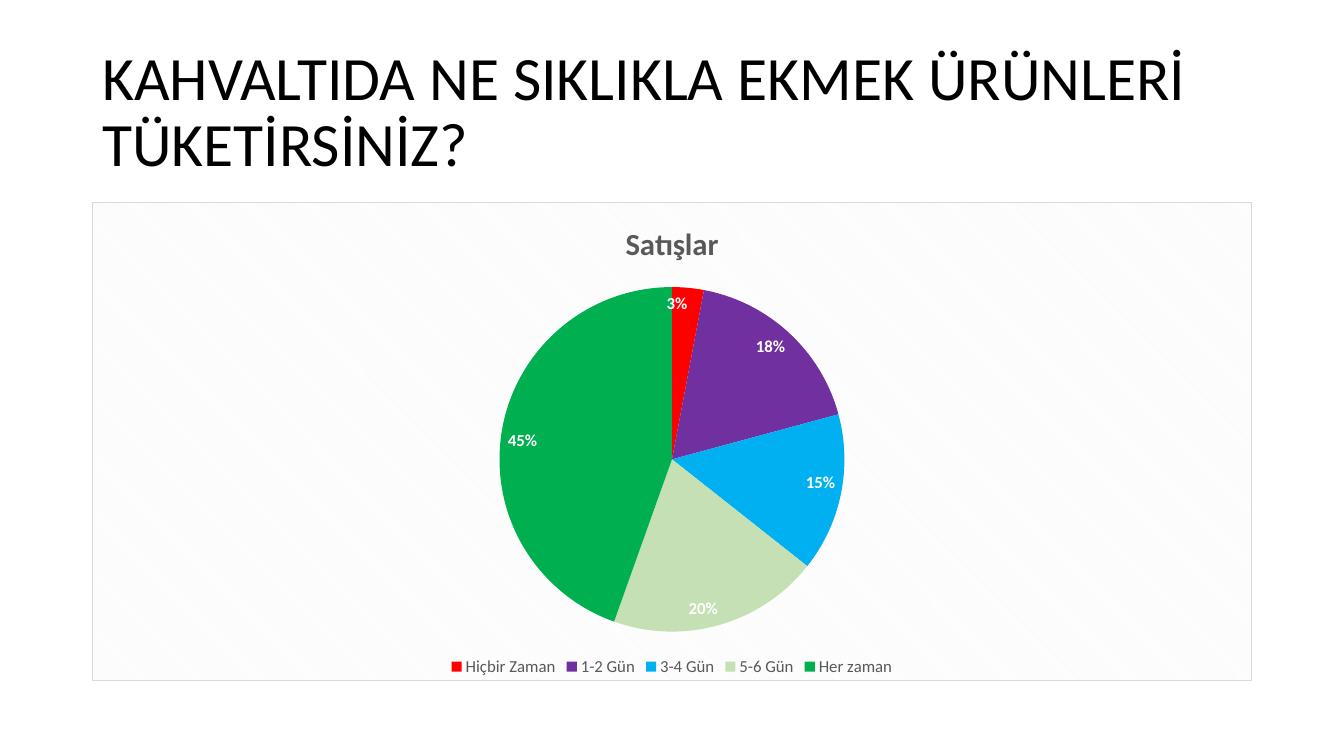
"""Build a slide with a survey question and a pie chart of the answers."""
import lxml.etree
import pptx
import pptx.chart.data
import pptx.dml.color
import pptx.enum.chart
import pptx.enum.text
import pptx.oxml
import pptx.util

FONT = "Calibri"
COLORS = {
    "title": "000000",
    "chart_text": "595959",
    "label": "FFFFFF",
    "pattern": "F2F2F2",
    "background": "FFFFFF",
    "border": "D9D9D9",
}
ANSWERS = [
    ("Hiçbir Zaman", 3, "FF0000"),
    ("1-2 Gün", 18, "7030A0"),
    ("3-4 Gün", 15, "00B0F0"),
    ("5-6 Gün", 20, "C5E0B4"),
    ("Her zaman", 45, "00B050"),
]
LEFT, WIDTH = 66, 828


def style_font(font, size, color, bold=False):
    """Set the typeface, size, colour and weight of a font."""
    font.name = FONT
    font.size = pptx.util.Pt(size)
    font.bold = bold
    font.color.rgb = pptx.dml.color.RGBColor.from_string(color)


def write_text(text_frame, text, *, size, color, bold=False, spacing=None):
    """Write one formatted paragraph into a text frame."""
    paragraph = text_frame.paragraphs[0]
    paragraph.line_spacing = spacing
    run = paragraph.add_run()
    run.text = text
    style_font(run.font, size, color, bold)


def add_title(slide, text):
    """Add the question at the top of the slide."""
    shape = slide.shapes.add_textbox(
        *map(pptx.util.Pt, (LEFT, 28.75, WIDTH, 104.4)))
    text_frame = shape.text_frame
    text_frame.word_wrap = True
    text_frame.vertical_anchor = pptx.enum.text.MSO_ANCHOR.MIDDLE
    write_text(text_frame, text, size=44, color=COLORS["title"], spacing=0.9)


def fill_chart_area(chart):
    """Give the chart area its diagonal pattern and thin border."""
    namespace = "http://schemas.openxmlformats.org/drawingml/2006/"
    properties = pptx.oxml.parse_xml(
        f'<c:spPr xmlns:c="{namespace}chart" xmlns:a="{namespace}main">'
        '<a:pattFill prst="dkDnDiag">'
        f'<a:fgClr><a:srgbClr val="{COLORS["pattern"]}"/></a:fgClr>'
        f'<a:bgClr><a:srgbClr val="{COLORS["background"]}"/></a:bgClr>'
        '</a:pattFill>'
        f'<a:ln w="{pptx.util.Pt(0.75)}"><a:solidFill>'
        f'<a:srgbClr val="{COLORS["border"]}"/></a:solidFill></a:ln>'
        '</c:spPr>')
    chart.element.find(f"{{{namespace}chart}}chart").addnext(properties)


def add_pie(slide, title, answers):
    """Add the pie chart with its title, legend and percentage labels."""
    data = pptx.chart.data.CategoryChartData()
    data.categories = [name for name, value, color in answers]
    data.add_series(title, [value for name, value, color in answers])
    chart = slide.shapes.add_chart(
        pptx.enum.chart.XL_CHART_TYPE.PIE,
        *map(pptx.util.Pt, (LEFT, 144, WIDTH, 342.6)), data).chart
    style_font(chart.font, 10, COLORS["title"])
    fill_chart_area(chart)

    chart.has_title = True
    chart.chart_title.include_in_layout = False
    write_text(chart.chart_title.text_frame, title, size=22,
               color=COLORS["chart_text"], bold=True)

    chart.has_legend = True
    chart.legend.position = pptx.enum.chart.XL_LEGEND_POSITION.BOTTOM
    chart.legend.include_in_layout = False
    style_font(chart.legend.font, 12, COLORS["chart_text"])

    plot = chart.plots[0]
    plot.vary_by_categories = True
    for index, (name, value, color) in enumerate(answers):
        fill = plot.series[0].points[index].format.fill
        fill.solid()
        fill.fore_color.rgb = pptx.dml.color.RGBColor.from_string(color)

    labels = plot.series[0].data_labels
    labels.show_value = False
    labels.show_percentage = True
    labels.number_format = "0%"
    labels.number_format_is_linked = False
    labels.position = pptx.enum.chart.XL_LABEL_POSITION.INSIDE_END
    style_font(labels.font, 12, COLORS["label"], bold=True)


def main():
    """Create the presentation and save it."""
    presentation = pptx.Presentation()
    presentation.slide_width = pptx.util.Pt(960)
    presentation.slide_height = pptx.util.Pt(540)
    slide = presentation.slides.add_slide(presentation.slide_layouts[6])
    add_title(slide, "KAHVALTIDA NE SIKLIKLA EKMEK ÜRÜNLERİ TÜKETİRSİNİZ?")
    add_pie(slide, "Satışlar", ANSWERS)
    presentation.save("out.pptx")


if __name__ == "__main__":
    main()
